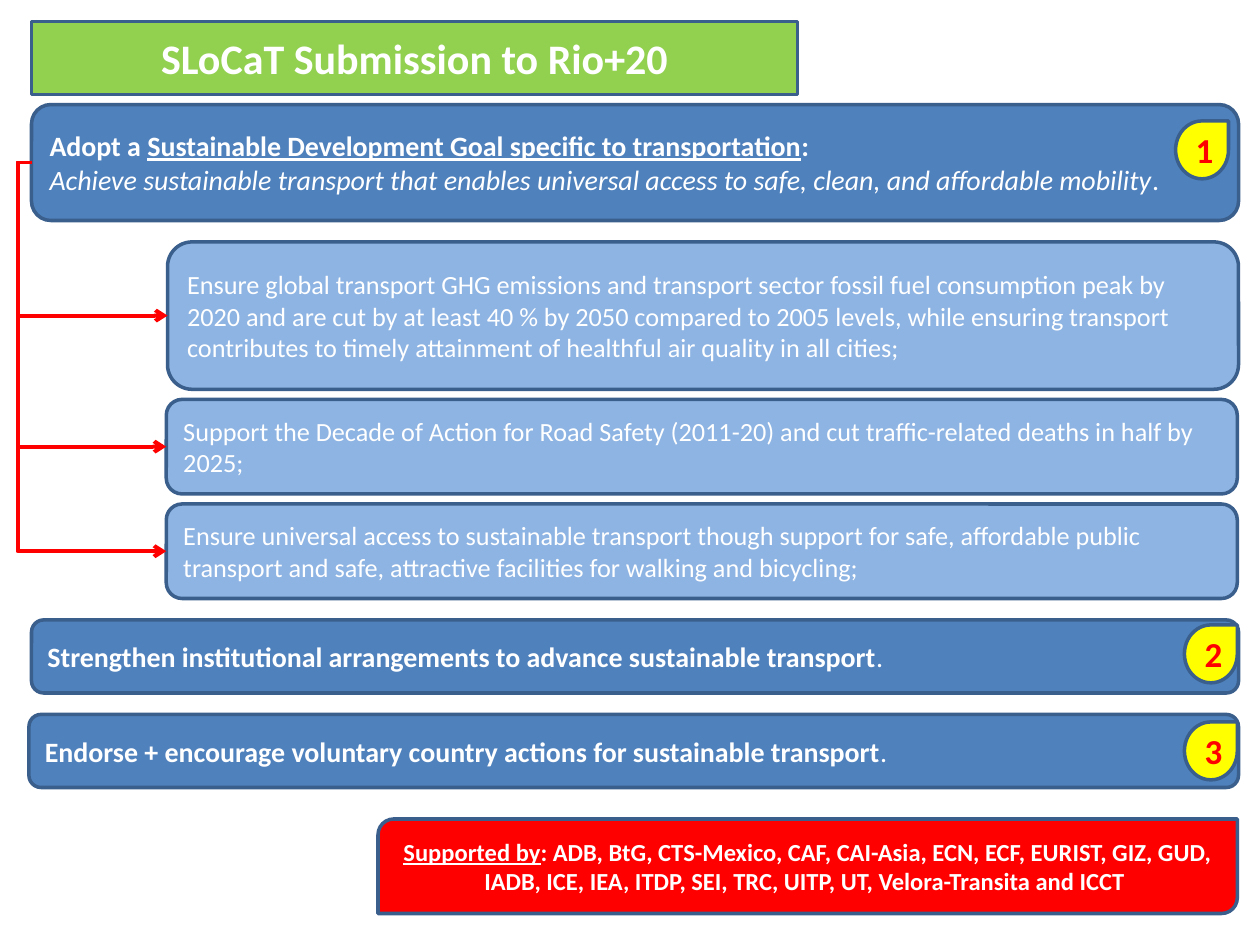
from dataclasses import dataclass

from lxml import etree
from pptx import Presentation
from pptx.dml.color import RGBColor
from pptx.enum import shapes, text
from pptx.oxml import ns
from pptx.util import Inches, Pt


@dataclass(frozen=True)
class Theme:
    font: str = "Calibri"
    white: str = "FFFFFF"
    green: str = "92D050"
    blue: str = "4F81BD"
    light_blue: str = "8EB4E3"
    outline: str = "3A5F8C"
    red: str = "FF0000"
    yellow: str = "FFFF00"
    title_size: float = 24
    number_size: float = 20
    goal_size: float = 16
    target_size: float = 15
    support_size: float = 14
    outline_width: float = 2
    arrow_width: float = 2.25


theme = Theme()
kinds = shapes.MSO_SHAPE
LEFT, CENTER = text.PP_ALIGN.LEFT, text.PP_ALIGN.CENTER


def style_box(box, fill, paragraphs, size, color=theme.white, align=LEFT):
    box.fill.solid()
    box.fill.fore_color.rgb = RGBColor.from_string(fill)
    box.line.color.rgb = RGBColor.from_string(theme.outline)
    box.line.width = Pt(theme.outline_width)
    frame = box.text_frame
    frame.word_wrap = True
    frame.auto_size = text.MSO_AUTO_SIZE.NONE
    frame.vertical_anchor = text.MSO_ANCHOR.MIDDLE
    for index, spans in enumerate(paragraphs):
        para = frame.add_paragraph() if index else frame.paragraphs[0]
        para.alignment = align
        for words, marks in spans:
            span = para.add_run()
            span.text = words
            span.font.name = theme.font
            span.font.size = Pt(size)
            span.font.color.rgb = RGBColor.from_string(color)
            span.font.bold = "b" in marks
            span.font.italic = "i" in marks
            span.font.underline = "u" in marks


def add_box(kind, place, *style, **options):
    box = page.shapes.add_shape(kind, *(Inches(value) for value in place))
    box.shadow.inherit = False
    style_box(box, *style, **options)
    return box


deck = Presentation()
deck.slide_width, deck.slide_height = Inches(10), Inches(7.5)
page = deck.slides.add_slide(deck.slide_layouts[5])

title = page.shapes.title
title.left, title.top = Inches(0.25), Inches(0.17)
title.width, title.height = Inches(6.08), Inches(0.58)
outline = etree.SubElement(title._element.spPr, ns.qn("a:prstGeom"), prst="roundRect")
etree.SubElement(outline, ns.qn("a:avLst"))
style_box(title, theme.green, [[("SLoCaT Submission to Rio+20", "b")]],
          theme.title_size, align=CENTER)

goals = [
    ((0.25, 0.83, 9.58, 0.92), [
        [("Adopt a ", "b"),
         ("Sustainable Development Goal specific to transportation", "bu"),
         (":", "b")],
        [("Achieve sustainable transport that enables universal access to safe, "
          "clean, and affordable mobility", "i"), (".", "")],
    ]),
    ((0.25, 4.92, 9.58, 0.58), [
        [("Strengthen institutional arrangements to advance sustainable transport", "b"),
         (".", "")],
    ]),
    ((0.23, 5.67, 9.6, 0.58), [
        [("Endorse + encourage voluntary country actions for sustainable transport", "b"),
         (".", "")],
    ]),
]
goal_boxes = [add_box(kinds.ROUNDED_RECTANGLE, place, theme.blue, paragraphs, theme.goal_size)
              for place, paragraphs in goals]

targets = [
    ((1.33, 1.92, 8.5, 1.17),
     "Ensure global transport GHG emissions and transport sector fossil fuel "
     "consumption peak by 2020 and are cut by at least 40 % by 2050 compared to 2005 "
     "levels, while ensuring transport contributes to timely attainment of healthful "
     "air quality in all cities;"),
    ((1.32, 3.17, 8.5, 0.75),
     "Support the Decade of Action for Road Safety (2011-20) and cut traffic-related "
     "deaths in half by 2025;"),
    ((1.32, 4, 8.5, 0.75),
     "Ensure universal access to sustainable transport though support for safe, "
     "affordable public transport and safe, attractive facilities for walking and "
     "bicycling;"),
]
left_site = 1
bend = Inches(0.11)
for place, words in targets:
    target = add_box(kinds.ROUNDED_RECTANGLE, place, theme.light_blue,
                     [[(words, "")]], theme.target_size)
    arrow = page.shapes.add_connector(shapes.MSO_CONNECTOR.ELBOW, 0, 0, 0, 0)
    arrow.begin_connect(goal_boxes[0], left_site)
    arrow.end_connect(target, left_site)
    arrow.line.color.rgb = RGBColor.from_string(theme.red)
    arrow.line.width = Pt(theme.arrow_width)
    properties = arrow._element.spPr
    etree.SubElement(properties.find(ns.qn("a:ln")), ns.qn("a:tailEnd"), type="arrow")
    etree.SubElement(properties, ns.qn("a:effectLst"))
    guides = properties.find(ns.qn("a:prstGeom")).find(ns.qn("a:avLst"))
    etree.SubElement(guides, ns.qn("a:gd"), name="adj1",
                     fmla=f"val {round(-100000 * bend / arrow.width)}")

for number, (left, top) in enumerate([(9.33, 0.96), (9.4, 4.96), (9.4, 5.73)], 1):
    add_box(kinds.TEAR, (left, top, 0.42, 0.46), theme.yellow, [[(str(number), "b")]],
            theme.number_size, color=theme.red, align=CENTER)

supporters = (": ADB, BtG, CTS-Mexico, CAF, CAI-Asia, ECN, ECF, EURIST, GIZ, GUD, IADB, "
              "ICE, IEA, ITDP, SEI, TRC, UITP, UT, Velora-Transita and ICCT ")
add_box(kinds.ROUND_2_DIAG_RECTANGLE, (3, 6.5, 6.82, 0.75), theme.red,
        [[("Supported by", "bu"), (supporters, "b")]], theme.support_size, align=CENTER)

deck.save("out.pptx")
